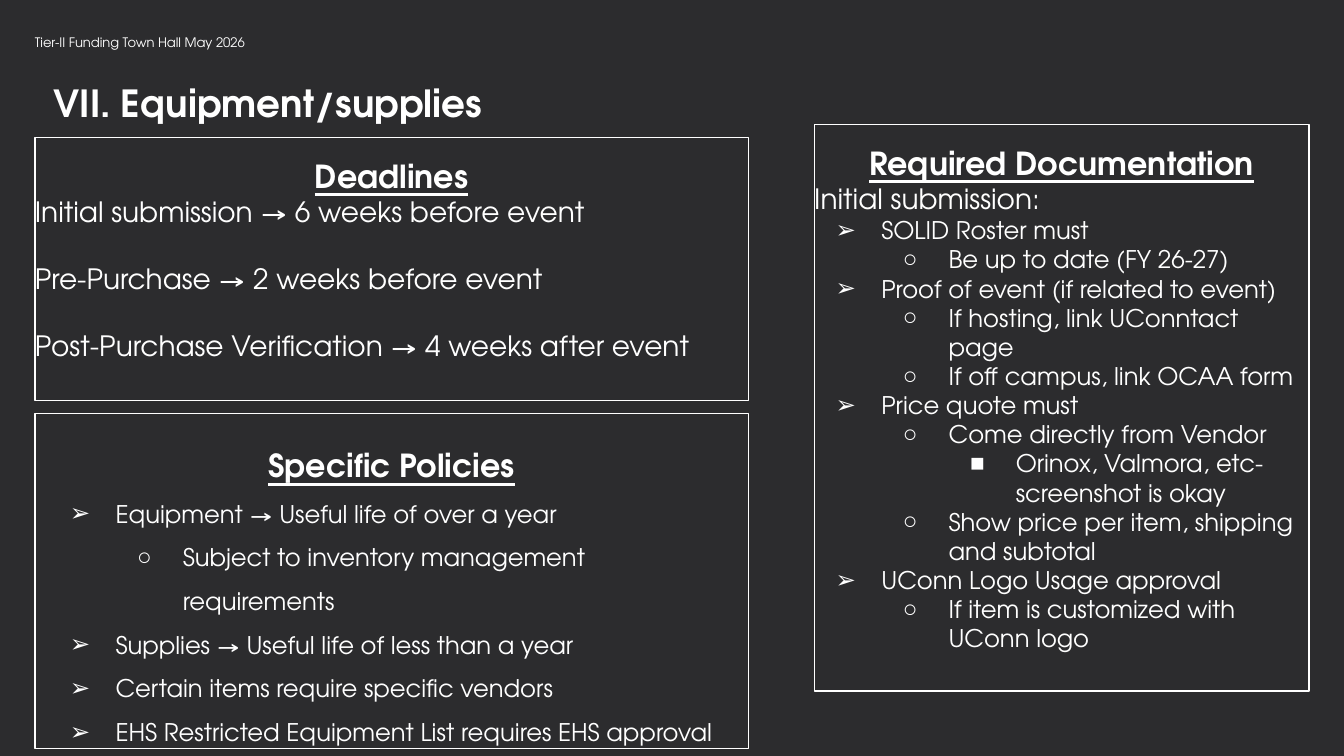
import pptx
import pptx.dml.color
import pptx.enum.text
import pptx.oxml
import pptx.oxml.ns
import pptx.util
from dataclasses import dataclass

Pt = pptx.util.Pt
ALIGN = pptx.enum.text.PP_ALIGN
ANCHOR = pptx.enum.text.MSO_ANCHOR


@dataclass(frozen=True)
class Theme:
    background: str = "2C2C2E"
    ink: str = "FFFFFF"
    typeface: str = "TeX Gyre Adventor"
    title: int = 20
    heading: int = 17
    lead: int = 15
    item: int = 13
    running_head: int = 7
    outline: float = 0.75


THEME = Theme()
BULLETS = "➢○■"
LEVEL_STEP = 36
HANGING = 24.5

DEADLINES = [
    "Initial submission → 6 weeks before event",
    "Pre-Purchase → 2 weeks before event",
    "Post-Purchase Verification → 4 weeks after event",
]
DOCUMENTS = [
    (0, "SOLID Roster must"),
    (1, "Be up to date (FY 26-27)"),
    (0, "Proof of event (if related to event)"),
    (1, "If hosting, link UConntact page"),
    (1, "If off campus, link OCAA form"),
    (0, "Price quote must"),
    (1, "Come directly from Vendor"),
    (2, "Orinox, Valmora, etc- screenshot is okay"),
    (1, "Show price per item, shipping and subtotal"),
    (0, "UConn Logo Usage approval"),
    (1, "If item is customized with UConn logo"),
]
POLICIES = [
    (0, "Equipment → Useful life of over a year"),
    (1, "Subject to inventory management requirements"),
    (0, "Supplies → Useful life of less than a year"),
    (0, "Certain items require specific vendors"),
    (0, "EHS Restricted Equipment List requires EHS approval"),
]


def rgb(colour):
    return pptx.dml.color.RGBColor.from_string(colour)


def apply(target, values):
    for name, value in values.items():
        setattr(target, name, value)


def add_property(paragraph, xml):
    """Append one DrawingML element to the paragraph properties."""
    namespace = pptx.oxml.ns.nsdecls("a")
    element = pptx.oxml.parse_xml(xml.replace("/>", f" {namespace}/>", 1)
                                  if xml.count("<") == 1
                                  else xml.replace(">", f" {namespace}>", 1))
    paragraph._p.get_or_add_pPr().append(element)


def place(holder, box, insets=(0, 0, 0, 0), anchor=ANCHOR.TOP):
    """Position a placeholder; box and insets are in points."""
    apply(holder, dict(zip(("left", "top", "width", "height"), map(Pt, box))))
    sides = ("margin_left", "margin_top", "margin_right", "margin_bottom")
    apply(holder.text_frame, {
        **dict(zip(sides, map(Pt, insets))),
        "word_wrap": True,
        "auto_size": pptx.enum.text.MSO_AUTO_SIZE.NONE,
        "vertical_anchor": anchor,
    })


def outline(panel):
    panel.line.color.rgb = rgb(THEME.ink)
    panel.line.width = Pt(THEME.outline)


def write(frame, text, size, level=None, tab=None, bold=False, underline=False,
          align=ALIGN.LEFT, spacing=1.0, before=0):
    """Add a paragraph; a level gives it a bullet, a tab gives it a tab stop."""
    paragraph = frame.paragraphs[0]
    if paragraph.runs:
        paragraph = frame.add_paragraph()
    properties = paragraph._p.get_or_add_pPr()
    if level is None:
        margin, hanging = 0, 0
        add_property(paragraph, "<a:buNone/>")
    else:
        margin, hanging = LEVEL_STEP * (level + 1), HANGING
        paragraph.level = level
        add_property(paragraph, f'<a:buClr><a:srgbClr val="{THEME.ink}"/></a:buClr>')
        add_property(paragraph, f'<a:buChar char="{BULLETS[level]}"/>')
    properties.set("marL", str(Pt(margin)))
    properties.set("indent", str(-Pt(hanging)))
    if tab:
        add_property(paragraph,
                     f'<a:tabLst><a:tab pos="{Pt(tab)}" algn="l"/></a:tabLst>')
    apply(paragraph, {"alignment": align, "line_spacing": spacing,
                      "space_before": Pt(before), "space_after": Pt(0)})
    run = paragraph.add_run()
    run.text = text
    apply(run.font, {"name": THEME.typeface, "size": Pt(size),
                     "bold": bold, "underline": underline})
    run.font.color.rgb = rgb(THEME.ink)


def write_heading(frame, text):
    write(frame, text, THEME.heading, bold=True, underline=True,
          align=ALIGN.CENTER, spacing=1.5)


def write_list(frame, entries, spacing):
    for level, text in entries:
        write(frame, text, THEME.item, level=level, spacing=spacing)


def main():
    deck = pptx.Presentation()
    apply(deck, {"slide_width": Pt(720), "slide_height": Pt(405)})
    slide = deck.slides.add_slide(deck.slide_layouts.get_by_name("Comparison"))
    slide.background.fill.solid()
    slide.background.fill.fore_color.rgb = rgb(THEME.background)
    title, running_head, deadlines, documents, policies = slide.placeholders

    place(title, (28.8, 42.5, 658.8, 24.5), anchor=ANCHOR.BOTTOM)
    write(title.text_frame, "VII.\tEquipment/supplies", THEME.title,
          tab=47.5, bold=True, spacing=1.15)

    place(running_head, (18.72, 10, 327.6, 18.72), insets=(0, 7.2, 7.2, 7.2))
    write(running_head.text_frame, "Tier-II Funding Town Hall May 2026",
          THEME.running_head, spacing=1.15)

    place(deadlines, (18.72, 73.6, 382.2, 141))
    write_heading(deadlines.text_frame, "Deadlines")
    for index, deadline in enumerate(DEADLINES):
        write(deadlines.text_frame, deadline, THEME.lead,
              before=18 if index else 0)

    place(documents, (436.2, 66.8, 265, 303.3))
    write_heading(documents.text_frame, "Required Documentation")
    write(documents.text_frame, "Initial submission:", THEME.lead)
    write_list(documents.text_frame, DOCUMENTS, spacing=1.0)

    place(policies, (18.72, 221.6, 382.2, 179.4), insets=(7.2,) * 4)
    write_heading(policies.text_frame, "Specific Policies")
    write_list(policies.text_frame, POLICIES, spacing=1.5)

    for panel in (deadlines, documents, policies):
        outline(panel)
    deck.save("out.pptx")


if __name__ == "__main__":
    main()
